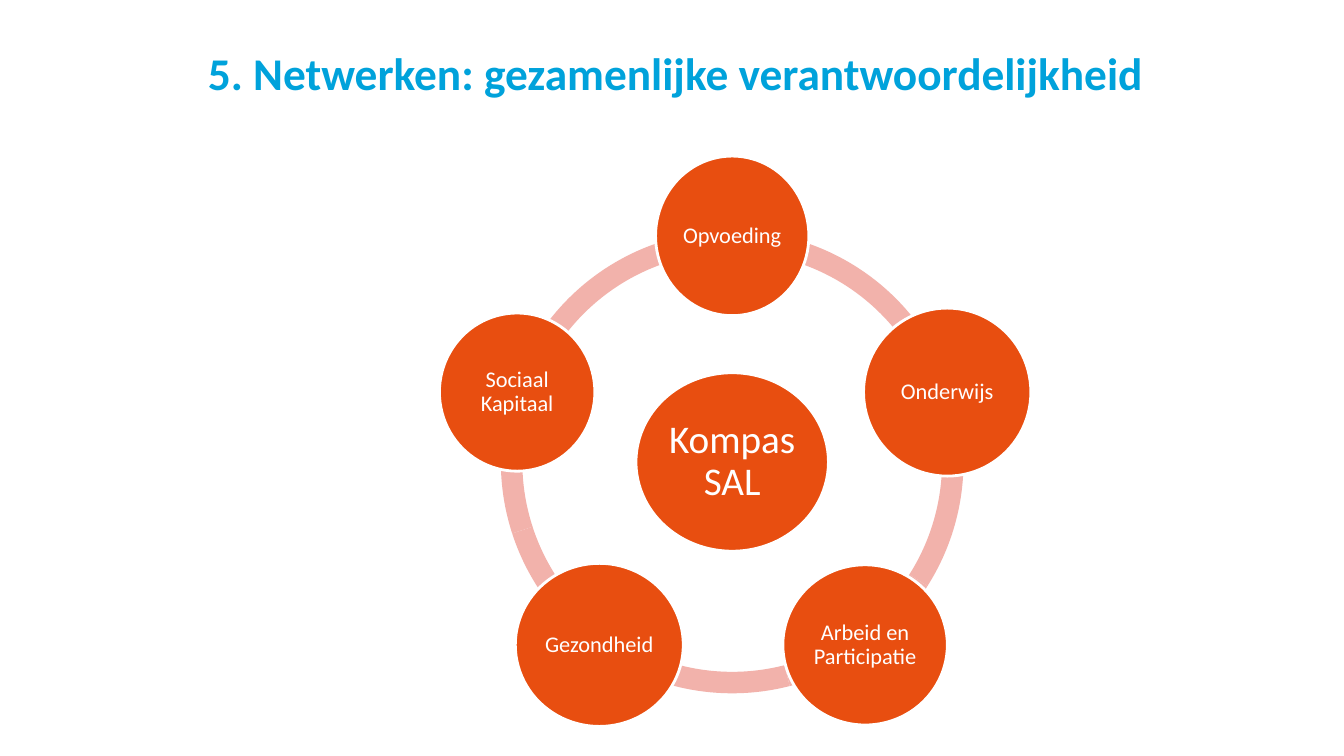
"""Build the slide with five network themes on a ring around the Kompas SAL hub."""
from math import cos, radians, sin

from pptx import Presentation
from pptx.dml.color import RGBColor
from pptx.enum.shapes import MSO_SHAPE
from pptx.enum.text import MSO_ANCHOR, PP_ALIGN
from pptx.util import Pt

ELLIPSE, BLOCK_ARC = MSO_SHAPE.OVAL, MSO_SHAPE.BLOCK_ARC
TOP, MIDDLE = MSO_ANCHOR.TOP, MSO_ANCHOR.MIDDLE
LEFT, CENTER = PP_ALIGN.LEFT, PP_ALIGN.CENTER

BLUE = RGBColor(0x00, 0xA2, 0xDB)
ORANGE = RGBColor(0xE8, 0x4E, 0x10)
PINK = RGBColor(0xF2, 0xB2, 0xAB)
WHITE = RGBColor(0xFF, 0xFF, 0xFF)

TITLE = "5. Netwerken: gezamenlijke verantwoordelijkheid"
HUB = ("Kompas SAL", 137.5, 127.5)
THEMES = [
    ("Opvoeding", 109.5, 114),
    ("Onderwijs", 119.5, 120),
    ("Arbeid en Participatie", 117.5, 114.5),
    ("Gezondheid", 120, 116.5),
    ("Sociaal Kapitaal", 111, 113),
]
ARC_BOUNDS = [32.4, 75.6, 118.8, 162, 205.2]

CENTER_X, CENTER_Y = 523, 330
RING_SIZE = 330.5
RING_THICKNESS = 0.0464
ORBIT = 161.5
ADJUSTMENT_PER_DEGREE = 0.6


def write(shape, text, size, color=WHITE, bold=False, align=CENTER,
          anchor=MIDDLE, inset=0, spacing=1.0):
    """Put formatted text in a shape."""
    frame = shape.text_frame
    frame.word_wrap = True
    frame.vertical_anchor = anchor
    frame.margin_left = frame.margin_right = Pt(inset)
    frame.margin_top = frame.margin_bottom = Pt(inset)
    para = frame.paragraphs[0]
    para.alignment = align
    para.line_spacing = spacing
    span = para.add_run()
    span.text = text
    span.font.name = "Calibri"
    span.font.size = Pt(size)
    span.font.bold = bold
    span.font.color.rgb = color


def add_centered(page, kind, x, y, width, height, fill):
    """Add a filled shape around a centre point."""
    shape = page.shapes.add_shape(
        kind, Pt(x - width / 2), Pt(y - height / 2), Pt(width), Pt(height))
    shape.shadow.inherit = False
    shape.fill.solid()
    shape.fill.fore_color.rgb = fill
    shape.line.fill.background()
    return shape


def add_circle(page, x, y, label, width, height, size, inset):
    """Add a labelled orange circle with a white edge."""
    circle = add_centered(page, ELLIPSE, x, y, width, height, ORANGE)
    circle.line.color.rgb = WHITE
    circle.line.width = Pt(2)
    write(circle, label, size, inset=inset, spacing=0.9)


def main():
    """Build and save the deck."""
    deck = Presentation()
    deck.slide_width, deck.slide_height = Pt(960), Pt(540)
    page = deck.slides.add_slide(deck.slide_layouts[6])

    title = page.shapes.add_textbox(Pt(148.5), Pt(32.5), Pt(681), Pt(60))
    write(title, TITLE, 32.4, color=BLUE, bold=True, align=LEFT, anchor=TOP)

    for start, end in zip(ARC_BOUNDS, ARC_BOUNDS[1:] + ARC_BOUNDS[:1]):
        arc = add_centered(page, BLOCK_ARC, CENTER_X, CENTER_Y,
                           RING_SIZE, RING_SIZE, PINK)
        arc.adjustments[0] = start * ADJUSTMENT_PER_DEGREE
        arc.adjustments[1] = end * ADJUSTMENT_PER_DEGREE
        arc.adjustments[2] = RING_THICKNESS

    add_circle(page, CENTER_X, CENTER_Y, *HUB, size=28, inset=2.8)
    for index, theme in enumerate(THEMES):
        angle = radians(index * 360 / len(THEMES) - 90)
        add_circle(page, CENTER_X + ORBIT * cos(angle),
                   CENTER_Y + ORBIT * sin(angle), *theme, size=16, inset=1.6)

    deck.save("out.pptx")


if __name__ == "__main__":
    main()
